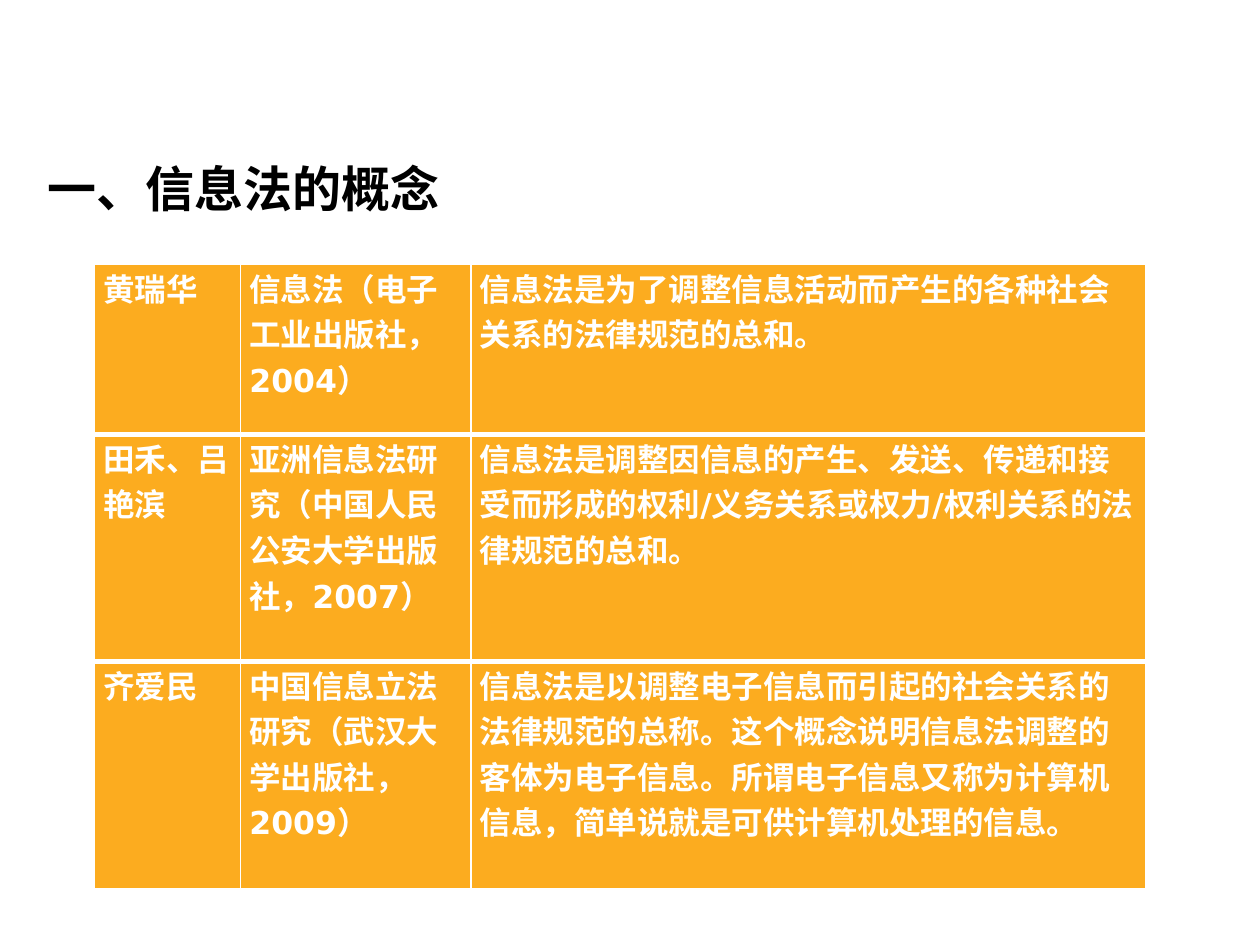
from dataclasses import dataclass

from lxml import etree
from pptx import Presentation
from pptx import util as u
from pptx.dml.color import RGBColor
from pptx.enum import text
from pptx.oxml.ns import qn


@dataclass(frozen=True)
class Theme:
    font: str = "DejaVu Sans"
    ink: str = "000000"
    fill: str = "FCAC1F"
    light: str = "FFFFFF"
    head: int = 28
    body: int = 18
    thin: int = 1
    thick: int = 3


class Maker:
    def __init__(self, slide, theme):
        self.slide = slide
        self.theme = theme

    def style(self, para, size, color):
        font = para.font
        font.name = self.theme.font
        font.size = u.Pt(size)
        font.bold = True
        font.color.rgb = RGBColor.from_string(color)

    def title(self, words, left, top, width, height):
        shape = self.slide.shapes.title
        shape.left, shape.top = u.Inches(left), u.Inches(top)
        shape.width, shape.height = u.Inches(width), u.Inches(height)
        frame = shape.text_frame
        frame.text = words
        frame.word_wrap = True
        frame.auto_size = text.MSO_AUTO_SIZE.SHAPE_TO_FIT_TEXT
        frame.vertical_anchor = text.MSO_ANCHOR.MIDDLE
        para = frame.paragraphs[0]
        para.alignment = text.PP_ALIGN.LEFT
        self.style(para, self.theme.head, self.theme.ink)

    def edge(self, cell, side, width):
        props = cell._tc.get_or_add_tcPr()
        line = etree.SubElement(props, qn(f"a:ln{side}"), w=str(u.Pt(width)))
        solid = etree.SubElement(line, qn("a:solidFill"))
        etree.SubElement(solid, qn("a:srgbClr"), val=self.theme.light)

    def cell(self, cell, words, first, last):
        theme = self.theme
        cell.text = words
        cell.margin_left = cell.margin_right = u.Inches(0.07)
        cell.margin_top = cell.margin_bottom = 0
        para = cell.text_frame.paragraphs[0]
        tabs = etree.SubElement(para._p.get_or_add_pPr(), qn("a:tabLst"))
        etree.SubElement(tabs, qn("a:tab"), pos=str(u.Inches(5.75)), algn="l")
        self.style(para, theme.body, theme.light)
        self.edge(cell, "L", theme.thin)
        self.edge(cell, "R", theme.thin)
        self.edge(cell, "T", theme.thin if first else theme.thick)
        self.edge(cell, "B", theme.thin if last else theme.thick)
        cell.fill.solid()
        cell.fill.fore_color.rgb = RGBColor.from_string(theme.fill)

    def table(self, rows, left, top, widths, heights):
        frame = self.slide.shapes.add_table(
            len(heights), len(widths), u.Inches(left), u.Inches(top),
            u.Inches(sum(widths)), u.Inches(sum(heights)))
        grid = frame.table
        grid.first_row = grid.horz_banding = False
        for col, width in zip(grid.columns, widths):
            col.width = u.Inches(width)
        end = len(rows) - 1
        for i, (row, height) in enumerate(zip(rows, heights)):
            grid.rows[i].height = u.Inches(height)
            for j, words in enumerate(row):
                self.cell(grid.cell(i, j), words, i == 0, i == end)


ROWS = [
    ("黄瑞华", "信息法（电子工业出版社，2004）",
     "信息法是为了调整信息活动而产生的各种社会关系的法律规范的总和。"),
    ("田禾、吕艳滨", "亚洲信息法研究（中国人民公安大学出版社，2007）",
     "信息法是调整因信息的产生、发送、传递和接受而形成的权利/义务关系"
     "或权力/权利关系的法律规范的总和。"),
    ("齐爱民", "中国信息立法研究（武汉大学出版社，2009）",
     "信息法是以调整电子信息而引起的社会关系的法律规范的总称。"
     "这个概念说明信息法调整的客体为电子信息。"
     "所谓电子信息又称为计算机信息，简单说就是可供计算机处理的信息。"),
]


def main():
    deck = Presentation()
    deck.slide_width, deck.slide_height = u.Inches(10), u.Inches(7.5)
    maker = Maker(deck.slides.add_slide(deck.slide_layouts[5]), Theme())
    maker.title("一、信息法的概念", 0.28, 1.21, 6.93, 0.57)
    maker.table(ROWS, 0.75, 2.1, (1.16, 1.83, 5.35), (1.35, 1.8, 1.8))
    deck.save("out.pptx")


if __name__ == "__main__":
    main()
